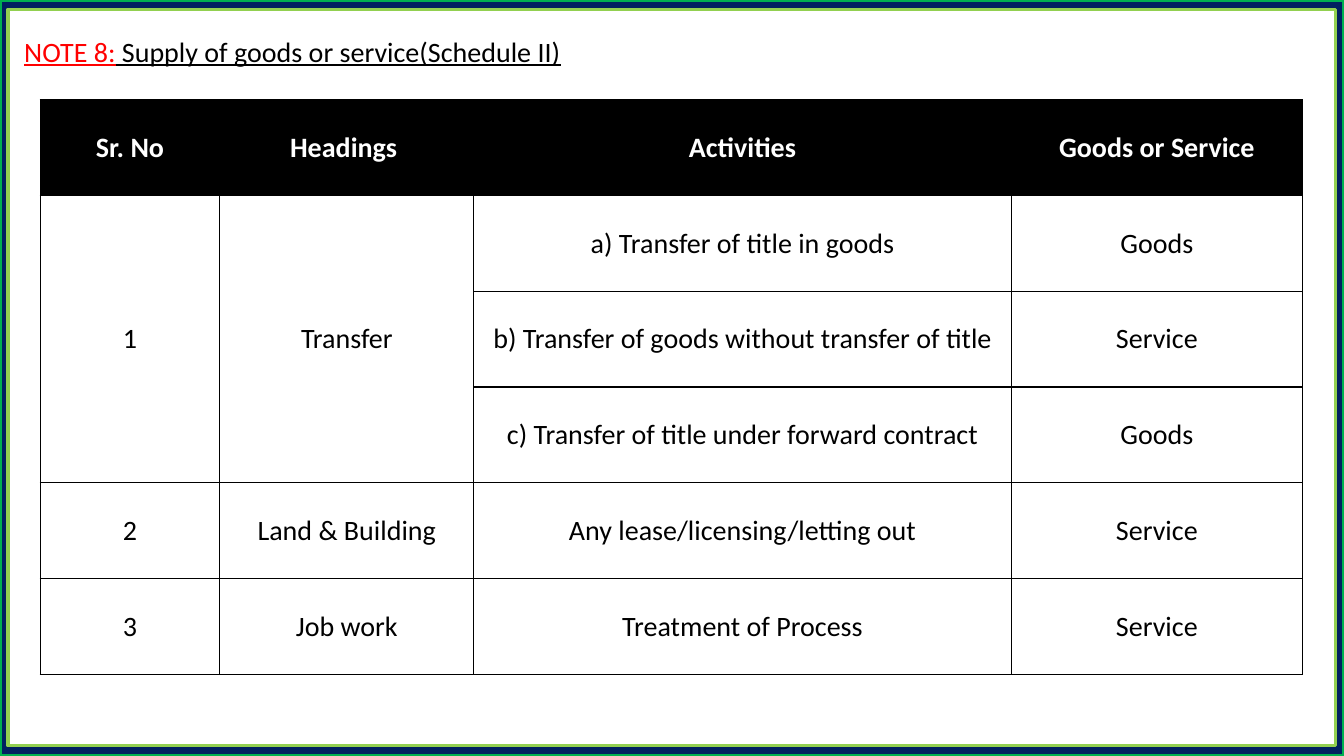
from lxml import etree
from pptx import Presentation
from pptx import util as u
from pptx.dml.color import RGBColor
from pptx.enum import shapes, text
from pptx.oxml import ns

COLORS = {
    "navy": "002060",
    "green": "00B050",
    "lime": "92D050",
    "white": "FFFFFF",
    "black": "000000",
    "red": "FF0000",
}

COLUMN_WIDTHS = [1.78, 2.52, 5.33, 2.89]
ROW_HEIGHT = 0.95
ROWS = [
    ["Sr. No", "Headings ", "Activities", "Goods or Service"],
    ["1", "Transfer", "a) Transfer of title in goods", "Goods"],
    ["", "", "b) Transfer of goods without transfer of title", "Service"],
    ["", "", "c) Transfer of title under forward contract", "Goods"],
    ["2", "Land & Building", "Any lease/licensing/letting out", "Service"],
    ["3", "Job work", "Treatment of Process", "Service"],
]


class NoteSlide:
    font_name = "Calibri"
    font_size = 20

    def __init__(self, prs):
        self.slide = prs.slides.add_slide(prs.slide_layouts[5])

    def color(self, name):
        return RGBColor.from_string(COLORS[name])

    def format_run(self, r, color, bold=False, underline=False):
        r.font.name = self.font_name
        r.font.size = u.Pt(self.font_size)
        r.font.bold = bold
        r.font.underline = underline
        r.font.color.rgb = self.color(color)

    def frame(self, left, top, width, height, fill, line, weight):
        sp = self.slide.shapes.add_shape(
            shapes.MSO_SHAPE.RECTANGLE, *map(u.Inches, (left, top, width, height)))
        sp.shadow.inherit = False
        sp.fill.solid()
        sp.fill.fore_color.rgb = self.color(fill)
        sp.line.color.rgb = self.color(line)
        sp.line.width = u.Pt(weight)

    def title(self, left, top, width, height, parts):
        sp = self.slide.shapes.title
        self.slide.shapes.element.append(sp.element)
        sp.left, sp.top, sp.width, sp.height = map(u.Inches, (left, top, width, height))
        tf = sp.text_frame
        tf.auto_size = text.MSO_AUTO_SIZE.NONE
        tf.word_wrap = False
        tf.vertical_anchor = text.MSO_ANCHOR.TOP
        p = tf.paragraphs[0]
        p.alignment = text.PP_ALIGN.LEFT
        for words, color in parts:
            r = p.add_run()
            r.text = words
            self.format_run(r, color, underline=True)

    def border(self, cell, color, weight):
        tcPr = cell._tc.get_or_add_tcPr()
        for side in ("lnL", "lnR", "lnT", "lnB"):
            ln = etree.SubElement(tcPr, ns.qn(f"a:{side}"), w=str(u.Pt(weight)))
            fill = etree.SubElement(ln, ns.qn("a:solidFill"))
            etree.SubElement(fill, ns.qn("a:srgbClr"), val=COLORS[color])

    def cell(self, cell, words, header):
        self.border(cell, "black", 1)
        if header:
            cell.fill.solid()
            cell.fill.fore_color.rgb = self.color("black")
        else:
            cell.fill.background()
        cell.vertical_anchor = text.MSO_ANCHOR.MIDDLE
        p = cell.text_frame.paragraphs[0]
        p.text = words
        p.alignment = text.PP_ALIGN.CENTER
        for r in p.runs:
            self.format_run(r, "white" if header else "black", bold=header)

    def table(self, left, top, rows, widths, row_height, merges):
        size = (sum(widths), row_height * len(rows))
        table = self.slide.shapes.add_table(
            len(rows), len(widths), *map(u.Inches, (left, top, *size))).table
        table.horz_banding = False
        for column, width in zip(table.columns, widths):
            column.width = u.Inches(width)
        for i, row in enumerate(rows):
            table.rows[i].height = u.Inches(row_height)
            for j, words in enumerate(row):
                self.cell(table.cell(i, j), words, header=i == 0)
        for start, end in merges:
            table.cell(*start).merge(table.cell(*end))


def main():
    prs = Presentation()
    prs.slide_width, prs.slide_height = u.Inches(13.33), u.Inches(7.5)
    s = NoteSlide(prs)
    s.frame(0, 0, 13.33, 7.5, "navy", "green", 3)
    s.frame(0.08, 0.09, 13.17, 7.31, "white", "lime", 2.25)
    s.title(0.14, 0.29, 5.61, 0.44, [
        ("NOTE 8:", "red"),
        (" Supply of goods or service(Schedule II)", "black"),
    ])
    s.table(0.4, 0.99, ROWS, COLUMN_WIDTHS, ROW_HEIGHT,
            merges=[((1, j), (3, j)) for j in (0, 1)])
    prs.save("out.pptx")


if __name__ == "__main__":
    main()
